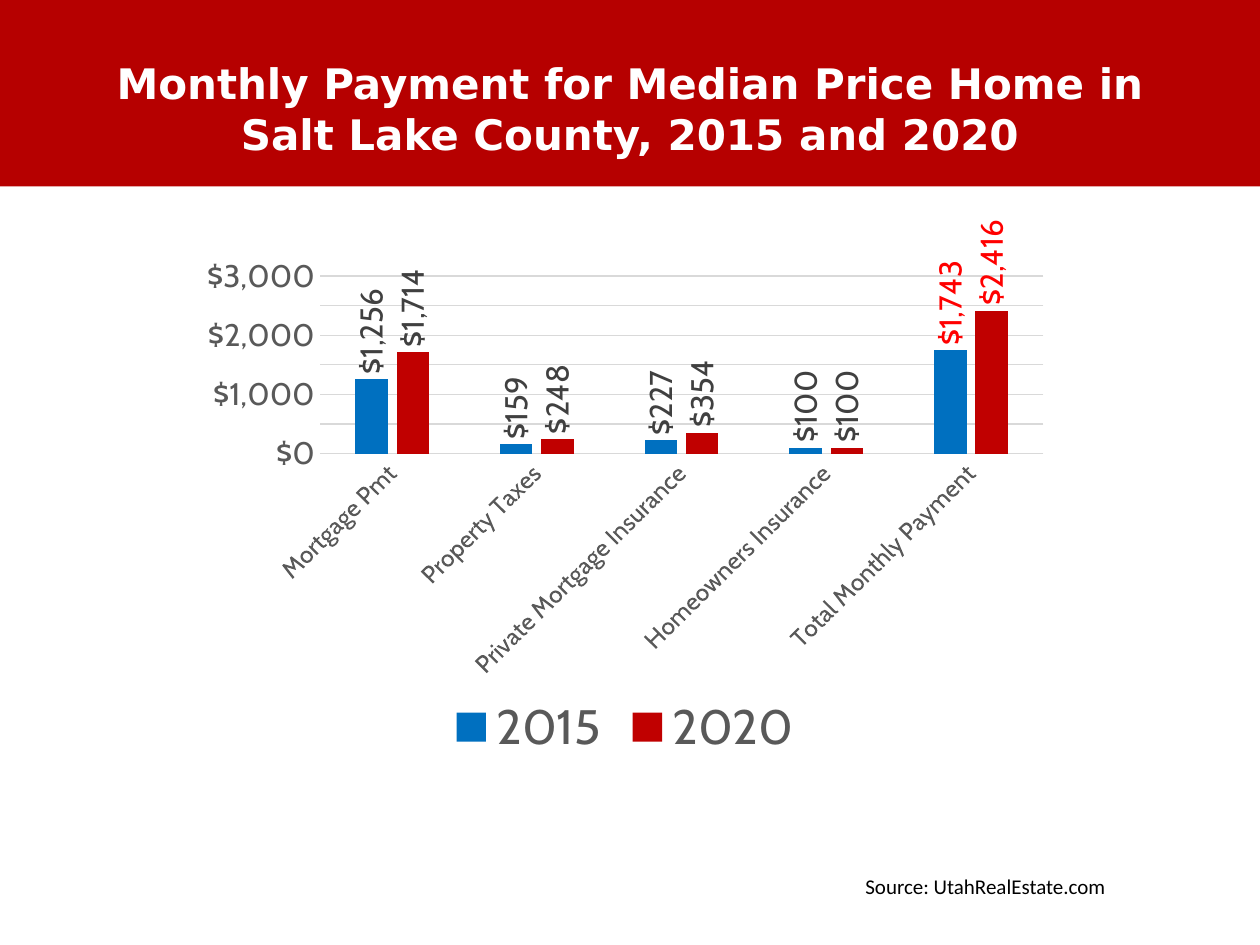
"""Build a slide comparing monthly home payments in 2015 and 2020."""
from copy import deepcopy
from lxml.etree import SubElement
from pptx import Presentation
from pptx.chart.data import CategoryChartData as Data
from pptx.dml.color import RGBColor
from pptx.enum.chart import XL_CHART_TYPE as Kind, XL_LABEL_POSITION as Spot
from pptx.enum.chart import XL_LEGEND_POSITION as Side, XL_TICK_MARK as Tick
from pptx.enum.shapes import MSO_SHAPE as Shape
from pptx.enum.text import MSO_ANCHOR as Anchor, PP_ALIGN as Align
from pptx.oxml.ns import qn
from pptx.util import Inches, Pt


def paint(fill, tint):
    fill.solid()
    fill.fore_color.rgb = RGBColor.from_string(tint)


def style(font, name, size, tint, bold=False):
    for key, value in {"name": name, "size": Pt(size), "bold": bold}.items():
        setattr(font, key, value)
    paint(font.fill, tint)


deck = Presentation()
deck.slide_width, deck.slide_height = Inches(10), Inches(7.5)
slide = deck.slides.add_slide(deck.slide_layouts[5])
shapes = slide.shapes

title = shapes.title
band = shapes.add_shape(Shape.RECTANGLE, 0, 0, Inches(10), Inches(1.48))
band.shadow.inherit = False
paint(band.fill, "B60000")
band.line.fill.background()
title.element.addprevious(band.element)

place = {"left": 0.5, "top": 0.41, "width": 9, "height": 1.25}
for key, value in place.items():
    setattr(title, key, Inches(value))
frame = title.text_frame
frame.text = "Monthly Payment for Median Price Home in Salt Lake County, 2015 and 2020"
frame.vertical_anchor = Anchor.TOP
frame.word_wrap = True
head = frame.paragraphs[0]
head.alignment = Align.CENTER
style(head.font, "DejaVu Sans", 24, "FFFFFF", True)

note = shapes.add_textbox(Inches(6.77), Inches(6.88), Inches(2.13), Inches(0.3))
note.text_frame.text = "Source: UtahRealEstate.com"
note.text_frame.word_wrap = False
style(note.text_frame.paragraphs[0].font, "Calibri", 12, "000000")

money = '"$"#,##0'
data = Data(number_format=money)
data.categories = ["Mortgage Pmt", "Property Taxes", "Private Mortgage Insurance",
                   "Homeowners Insurance", "Total Monthly Payment"]
data.add_series("2015", [1256, 159, 227, 100, 1743])
data.add_series("2020", [1714, 248, 354, 100, 2416])
chart = shapes.add_chart(Kind.COLUMN_CLUSTERED, Inches(1.5), Inches(1.75),
                         Inches(6.92), Inches(4.33), data).chart
chart.has_title = False
style(chart.font, "DejaVu Sans", 10, "000000")
chart.has_legend = True
chart.legend.position = Side.BOTTOM
chart.legend.include_in_layout = False
style(chart.legend.font, "Cabin", 28, "595959")

plot = chart.plots[0]
for key, value in {"gap_width": 219, "overlap": -27, "vary_by_categories": False}.items():
    setattr(plot, key, value)
for bars, tint in zip(plot.series, ["0070C0", "C00000"]):
    paint(bars.format.fill, tint)
    tags = bars.data_labels
    traits = {"show_value": True, "number_format": money,
              "number_format_is_linked": False, "position": Spot.OUTSIDE_END}
    for key, value in traits.items():
        setattr(tags, key, value)
    style(tags.font, "Cabin", 18, "404040")
    total = bars.points[4].data_label
    style(total.font, "Cabin", 18, "FF0000")
    total.position = Spot.OUTSIDE_END

cat, val = chart.category_axis, chart.value_axis
for axis, size in [(cat, 14), (val, 18)]:
    axis.major_tick_mark = axis.minor_tick_mark = Tick.NONE
    style(axis.tick_labels.font, "Cabin", size, "595959")
scale = {"minimum_scale": 0, "maximum_scale": 3000, "major_unit": 1000, "minor_unit": 500,
         "has_major_gridlines": True, "has_minor_gridlines": True}
for key, value in scale.items():
    setattr(val, key, value)
val.tick_labels.number_format = money
val.tick_labels.number_format_is_linked = False
val.format.line.fill.background()
for part in [cat, val.major_gridlines]:
    paint(part.format.line.fill, "D9D9D9")
    part.format.line.width = Pt(0.75)

root = chart.element
look = root.xpath(".//c:majorGridlines/c:spPr")[0]
root.xpath(".//c:minorGridlines")[0].append(deepcopy(look))
for route, angle in [("c:dLbls", -90), ("c:catAx", -45)]:
    for body in root.xpath(f".//{route}//a:bodyPr"):
        body.set("rot", str(angle * 60000))
        body.set("vert", "horz")

area = root.xpath(".//c:plotArea")[0]
layout = SubElement(area, qn("c:layout"))
area.insert(0, layout)
manual = SubElement(layout, qn("c:manualLayout"))
inner = {"layoutTarget": "inner", "xMode": "edge", "yMode": "edge",
         "x": 0.15, "y": 0.09, "w": 0.83, "h": 0.33}
for key, value in inner.items():
    SubElement(manual, qn(f"c:{key}")).set("val", str(value))

deck.save("out.pptx")
